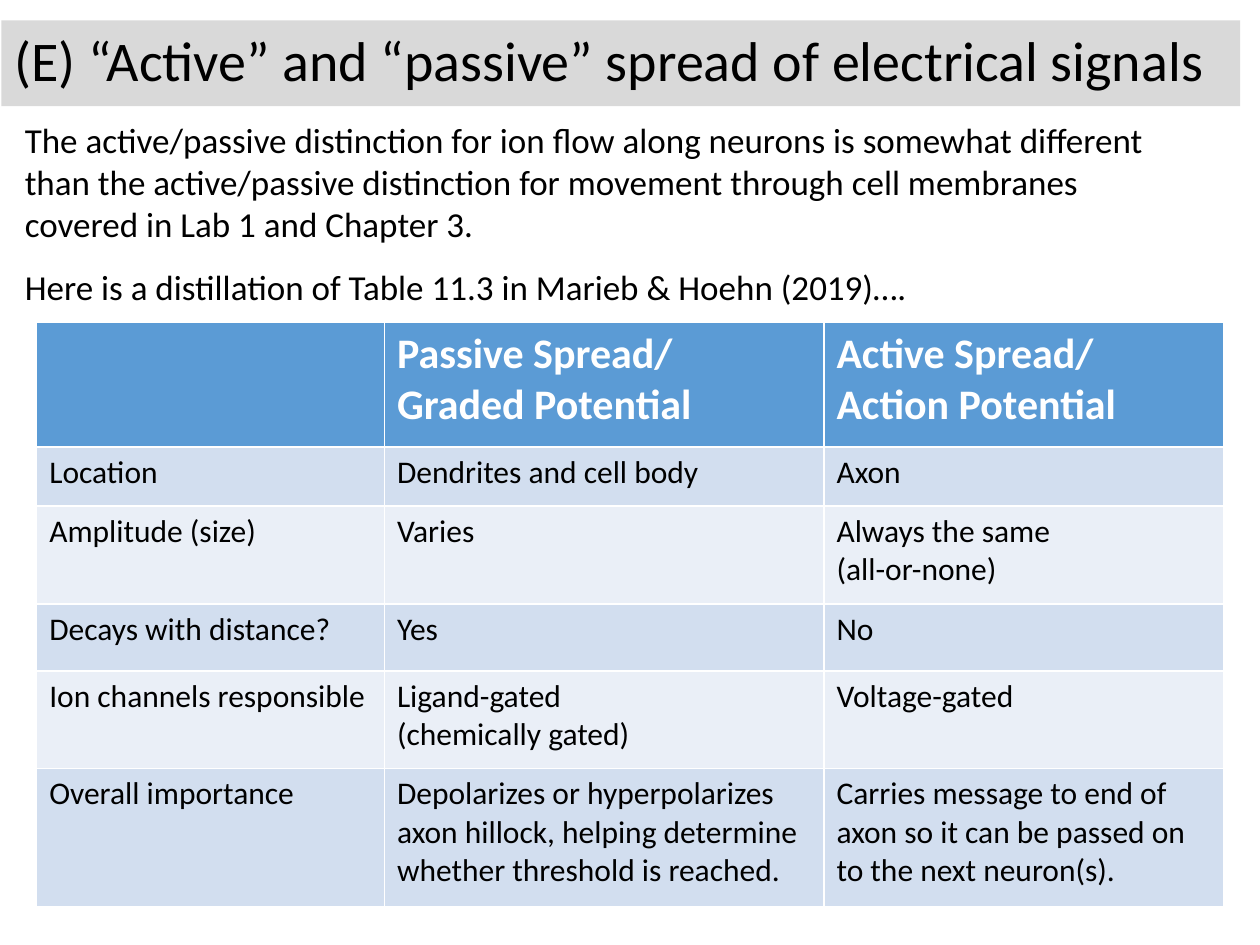
from pptx import Presentation
from pptx.dml.color import RGBColor
from pptx.enum.text import MSO_ANCHOR as Anchor, MSO_AUTO_SIZE as AutoSize, PP_ALIGN as Align
from pptx.util import Cm, Pt

BLACK = RGBColor(0x00, 0x00, 0x00)
WHITE = RGBColor(0xFF, 0xFF, 0xFF)
BANNER_GREY = RGBColor(0xD9, 0xD9, 0xD9)
HEADER_BLUE = RGBColor(0x5B, 0x9B, 0xD5)
BAND_DARK = RGBColor(0xD2, 0xDE, 0xEF)
BAND_LIGHT = RGBColor(0xEA, 0xEF, 0xF7)

TITLE = "(E) “Active” and “passive” spread of electrical signals"
INTRO = [
    "The active/passive distinction for ion flow along neurons is somewhat different "
    "than the active/passive distinction for movement through cell membranes "
    "covered in Lab 1 and Chapter 3.",
    "Here is a distillation of Table 11.3 in Marieb & Hoehn (2019)….",
]
COMPARISON = [
    ["", "Passive Spread/\vGraded Potential", "Active Spread/\vAction Potential"],
    ["Location", "Dendrites and cell body", "Axon"],
    ["Amplitude (size)", "Varies", "Always the same\n(all-or-none)"],
    ["Decays with distance?", "Yes", "No"],
    ["Ion channels responsible", "Ligand-gated\n(chemically gated)", "Voltage-gated"],
    [
        "Overall importance",
        "Depolarizes or hyperpolarizes axon hillock, helping determine "
        "whether threshold is reached.",
        "Carries message to end of axon so it can be passed on to the next neuron(s).",
    ],
]
COLUMN_WIDTHS = [7.01, 8.86, 8.05]
ROW_HEIGHTS = [2.51, 1.19, 1.98, 1.35, 1.96, 2.79]


class SlideBuilder:
    styles = {
        "title": {"size": Pt(32), "bold": False, "color": BLACK},
        "intro": {"size": Pt(20), "bold": False, "color": BLACK},
        "header": {"size": Pt(24), "bold": True, "color": WHITE},
        "body": {"size": Pt(18), "bold": False, "color": BLACK},
    }

    def __init__(self, deck):
        self.slide = deck.slides.add_slide(deck.slide_layouts[5])

    def set_text(self, frame, text, style, **paragraph_format):
        frame.text = text
        for paragraph in frame.paragraphs:
            for name, value in paragraph_format.items():
                setattr(paragraph, name, value)
            for run in paragraph.runs:
                font_format = {"name": "Calibri", **self.styles[style]}
                run.font.color.rgb = font_format.pop("color")
                for name, value in font_format.items():
                    setattr(run.font, name, value)

    def title(self, text, left, top, width, height):
        banner = self.slide.shapes.title
        place = {"left": left, "top": top, "width": width, "height": height}
        for name, value in place.items():
            setattr(banner, name, Cm(value))
        banner.fill.solid()
        banner.fill.fore_color.rgb = BANNER_GREY
        frame_format = {"auto_size": AutoSize.NONE, "vertical_anchor": Anchor.MIDDLE}
        for name, value in frame_format.items():
            setattr(banner.text_frame, name, value)
        self.set_text(banner.text_frame, text, "title", alignment=Align.LEFT, line_spacing=0.9)

    def text(self, paragraphs, *place):
        frame = self.slide.shapes.add_textbox(*map(Cm, place)).text_frame
        frame.word_wrap = True
        self.set_text(frame, "\n".join(paragraphs), "intro")
        for paragraph in frame.paragraphs[1:]:
            paragraph.space_before = Pt(12)

    def table(self, rows, left, top, widths, heights):
        place = map(Cm, (left, top, sum(widths), sum(heights)))
        grid = self.slide.shapes.add_table(len(rows), len(widths), *place).table
        for column, width in zip(grid.columns, widths):
            column.width = Cm(width)
        for index, (row, height, texts) in enumerate(zip(grid.rows, heights, rows)):
            row.height = Cm(height)
            band = BAND_DARK if index % 2 else BAND_LIGHT
            fill, style = (band, "body") if index else (HEADER_BLUE, "header")
            for cell, text in zip(row.cells, texts):
                cell.fill.solid()
                cell.fill.fore_color.rgb = fill
                self.set_text(cell.text_frame, text, style)


def main():
    deck = Presentation()
    deck.slide_width, deck.slide_height = Cm(25.4), Cm(19.05)
    builder = SlideBuilder(deck)
    builder.title(TITLE, 0.03, 0.41, 24.97, 1.73)
    builder.text(INTRO, 0.25, 2.26, 24.16, 4.11)
    builder.table(COMPARISON, 0.74, 6.5, COLUMN_WIDTHS, ROW_HEIGHTS)
    deck.save("out.pptx")


if __name__ == "__main__":
    main()
